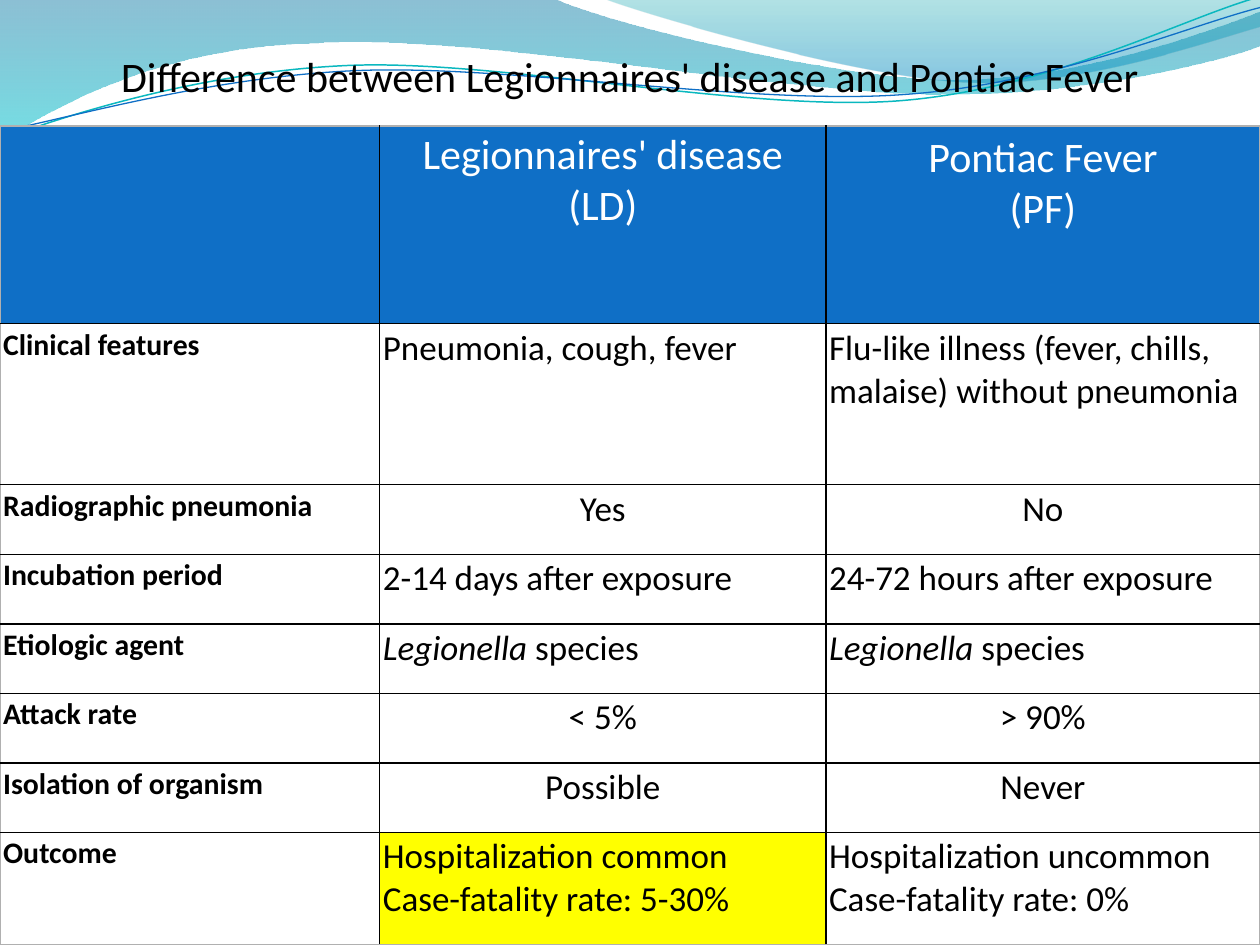
from pptx import Presentation
from pptx import util as u
from pptx.dml.color import RGBColor
from pptx.enum import text
from pptx.oxml import parse_xml
from pptx.oxml.ns import nsdecls, qn
from lxml import etree

Pt = u.Pt
THEME = {
    "font": "Calibri", "head": 24, "body": 20, "label": 17,
    "ink": "000000", "white": "FFFFFF", "blue": "0F6FC6", "teal": "0AB8BF",
    "mark": "FFFF00", "edge": "B0B0B0",
}
LEFT, MID = text.PP_ALIGN.LEFT, text.PP_ALIGN.CENTER


def trace(steps, close):
    """Outline from points (2 numbers) and Bezier curves (6 numbers)."""
    pen = slide.shapes.build_freeform(*map(Pt, steps[0]))
    dots = [(Pt(step[k]), Pt(step[k + 1]))
            for step in steps[1:] for k in range(0, len(step), 2)]
    pen.add_line_segments(dots, close=close)
    shape = pen.convert_to_shape()
    shape.shadow.inherit = False
    nodes = iter(list(shape.element.spPr.iter(qn("a:lnTo"))))
    for step in steps[1:]:
        node = next(nodes)
        if len(step) == 6:
            node.tag = qn("a:cubicBezTo")
            for _ in range(2):
                extra = next(nodes)
                node.append(extra[0])
                extra.getparent().remove(extra)
    return shape


def write(para, line, size, ink, bold, align):
    """Fill a paragraph; a bar in the line ends its italic part."""
    parts = line.split("|")
    para.text = parts[0]
    for part in parts[1:]:
        para.add_run().text = part
    para.alignment = align
    for run in para.runs:
        form = {"name": THEME["font"], "size": Pt(THEME[size]), "bold": bold}
        for key, val in form.items():
            setattr(run.font, key, val)
        run.font.color.rgb = RGBColor.from_string(THEME[ink])
    if len(parts) > 1:
        para.runs[0].font.italic = True


deck = Presentation()
deck.slide_width, deck.slide_height = Pt(720), Pt(540)
slide = deck.slides.add_slide(deck.slide_layouts[6])

# Waves: outline, then gradient stops as (place, colour, opacity in percent)
waves = [
    ([(0, 0), (316.8, -0.7),
      (342.7, 12.2, 478.1, 45.4, 545.8, 45.4),
      (614.2, 45.4, 689.8, 18.7, 720, 6.5), (720.7, 25.9),
      (707.8, 31.7, 626.4, 54.7, 537.1, 54),
      (447.8, 54, 275, 20.2, 185, 24.5),
      (92.9, 25.9, 33.1, 59.8, -0.7, 81.4), (0, 0)],
     [(0, "0074A1", 45), (1, "00C6CF", 55)]),
    ([(344.9, -0.7),
      (366.5, 7.9, 491, 44.6, 553.7, 46.8),
      (616.3, 49.7, 691.9, 23, 720, 15.1), (720, 0), (344.9, -0.7)],
     [(0, "00A1A9", 30), (0.8, "008BBF", 45)]),
]
for steps, stops in waves:
    wave = trace(steps, True)
    wave.line.fill.background()
    wave.fill.gradient()
    wave.fill.gradient_angle = 270
    for stop, (place, tint, _) in zip(wave.fill.gradient_stops, stops):
        stop.position = place
        stop.color.rgb = RGBColor.from_string(tint)
    tints = wave.element.spPr.iter(qn("a:srgbClr"))
    for node, (_, _, alpha) in zip(list(tints), stops):
        etree.SubElement(node, qn("a:alpha")).set("val", str(alpha * 1000))

curves = [
    ("teal", 0.85, [(-1.4, 62.9),
                    (33.8, 51.7, 114.1, 29.4, 199.8, 29.9),
                    (284.9, 30.3, 425.8, 67.3, 512.4, 64.9),
                    (599, 62.4, 676.4, 25.7, 720.2, 15.5)]),
    ("blue", 0.75, [(-1.1, 58),
                    (32.9, 53.8, 118.3, 32.5, 204.1, 33),
                    (290.6, 33.4, 428.9, 63.8, 515.5, 61.4),
                    (601.3, 59.6, 678.4, 30.1, 721.4, 21.3)]),
]
for ink, width, steps in curves:
    curve = trace(steps, False)
    curve.rotation = 357.3
    curve.fill.background()
    curve.line.width = Pt(width)
    curve.line.color.rgb = RGBColor.from_string(THEME[ink])

# Table: alignment of the two value columns, then the cell texts
rows = [
    (MID, "", "Legionnaires' disease\n(LD)", "Pontiac Fever\n(PF)"),
    (LEFT, "Clinical features", "Pneumonia, cough, fever",
     "Flu-like illness (fever, chills, malaise) without pneumonia"),
    (MID, "Radiographic pneumonia", "Yes", "No"),
    (LEFT, "Incubation period", "2-14 days after exposure",
     "24-72 hours after exposure"),
    (LEFT, "Etiologic agent", "Legionella| species", "Legionella| species"),
    (MID, "Attack rate", "< 5%", "> 90%"),
    (MID, "Isolation of organism", "Possible", "Never"),
    (LEFT, "Outcome", "Hospitalization common\vCase-fatality rate: 5-30%",
     "Hospitalization uncommon\vCase-fatality rate: 0%"),
]
wide = [217, 255, 248]
high = [113, 92] + [39.75] * 5 + [64]
grid = slide.shapes.add_table(len(high), len(wide), Pt(0), Pt(72),
                              Pt(sum(wide)), Pt(sum(high))).table
grid.first_row = grid.horz_banding = False
for col, size in zip(grid.columns, wide):
    col.width = Pt(size)
for row, size in zip(grid.rows, high):
    row.height = Pt(size)

for i, (align, *cells) in enumerate(rows):
    for j, words in enumerate(cells):
        cell = grid.cell(i, j)
        if i or j == 1:
            for side in ("left", "right", "top", "bottom"):
                setattr(cell, "margin_" + side, Pt(1.8))
        props = cell._tc.get_or_add_tcPr()
        outer = {"L": j == 0, "R": j == len(wide) - 1,
                 "T": i == 0, "B": i == len(high) - 1}
        for side, edge in outer.items():
            ink = THEME["edge" if edge else "ink"]
            props.append(parse_xml(
                f'<a:ln{side} {nsdecls("a")} w="{Pt(1)}"><a:solidFill>'
                f'<a:srgbClr val="{ink}"/></a:solidFill></a:ln{side}>'))
        tint = "blue" if i == 0 else "mark" if (i, j) == (7, 1) else None
        if tint:
            cell.fill.solid()
            cell.fill.fore_color.rgb = RGBColor.from_string(THEME[tint])
        else:
            cell.fill.background()
        size = "head" if i == 0 else "body" if j else "label"
        ink = "white" if i == 0 else "ink"
        frame = cell.text_frame
        for n, line in enumerate(words.split("\n") if words else []):
            para = frame.add_paragraph() if n else frame.paragraphs[0]
            write(para, line, size, ink, i > 0 and j == 0,
                  align if j else LEFT)

# Title
frame = slide.shapes.add_textbox(Pt(0), Pt(0), Pt(720), Pt(102)).text_frame
form = {"word_wrap": True, "vertical_anchor": text.MSO_ANCHOR.TOP,
        "margin_left": Pt(3.6), "margin_right": Pt(3.6),
        "margin_top": Pt(29.3), "margin_bottom": Pt(0)}
for key, val in form.items():
    setattr(frame, key, val)
write(frame.paragraphs[0],
      "Difference between Legionnaires' disease and Pontiac Fever",
      "head", "ink", False, MID)

deck.save("out.pptx")
